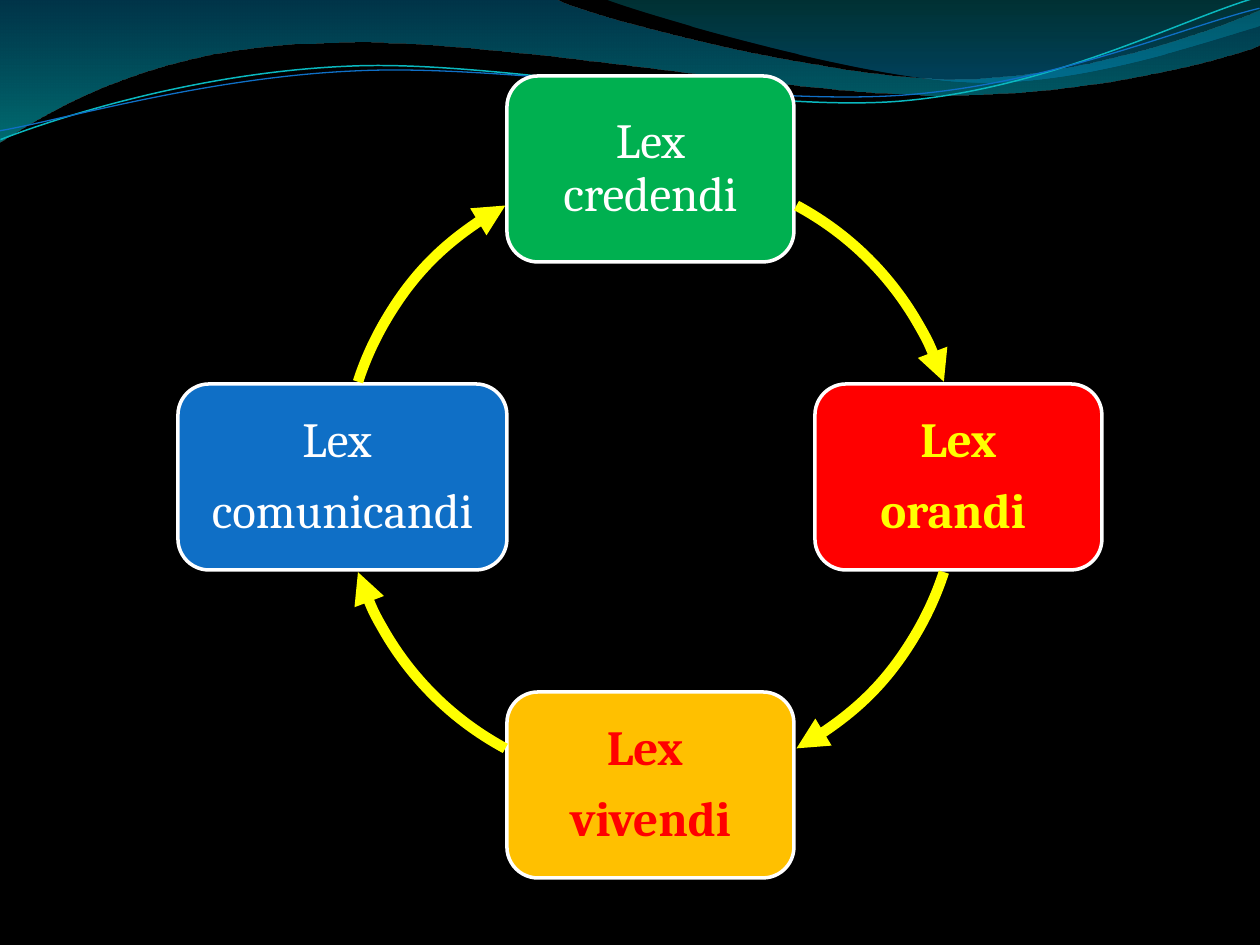
from lxml import etree
from pptx import Presentation
from pptx import util as u
from pptx.dml.color import RGBColor
from pptx.enum import shapes, text
from pptx.oxml.ns import qn

SCALE = u.Inches(1) / 126  # EMU per px
BLACK = RGBColor(0x00, 0x00, 0x00)
WHITE = RGBColor(0xFF, 0xFF, 0xFF)
YELLOW = RGBColor(0xFF, 0xFF, 0x00)
RED = RGBColor(0xFF, 0x00, 0x00)
GREEN = RGBColor(0x00, 0xB0, 0x50)
AMBER = RGBColor(0xFF, 0xC0, 0x00)
BLUE = RGBColor(0x0F, 0x6F, 0xC6)
TURQUOISE = RGBColor(0x0A, 0xB8, 0xBF)
DEEP_BLUE = RGBColor(0x00, 0x74, 0xA1)
LIGHT_TEAL = RGBColor(0x00, 0xC6, 0xCF)
TEAL = RGBColor(0x00, 0xA1, 0xA9)
SKY = RGBColor(0x00, 0x8B, 0xBF)


def px(value):
    return u.Emu(round(value * SCALE))


class Painter:
    font = "Cambria"
    size = u.Pt(28)

    def __init__(self, page):
        self.page = page

    def outline(self, start, segments, close):
        """Freeform; a segment is one line end or three Bezier points."""
        builder = self.page.shapes.build_freeform(*start, scale=SCALE)
        builder.add_line_segments([point for segment in segments for point in segment],
                                  close=close)
        shape = builder.convert_to_shape()
        shape.shadow.inherit = False
        # Join each run of three line ends into one Bezier curve
        line_ends = iter(shape._element.xpath(".//a:path/a:lnTo"))
        for segment in segments:
            steps = [next(line_ends) for _ in segment]
            if len(steps) == 3:
                curve = etree.Element(qn("a:cubicBezTo"))
                steps[0].addprevious(curve)
                for step in steps:
                    curve.append(step[0])
                    step.getparent().remove(step)
        return shape

    def wave(self, start, segments, stops):
        """Filled wave; each stop is (position, colour, opacity in percent)."""
        shape = self.outline(start, segments, True)
        shape.line.fill.background()
        shape.fill.gradient()
        shape.fill.gradient_angle = 270
        for stop, (position, colour, _) in zip(shape.fill.gradient_stops, stops):
            stop.position = position
            stop.color.rgb = colour
        for element, (_, _, opacity) in zip(shape._element.xpath(".//a:gs/a:srgbClr"), stops):
            etree.SubElement(element, qn("a:alpha"), val=str(opacity * 1000))

    def ripple(self, start, segments, colour, width):
        shape = self.outline(start, segments, False)
        shape.rotation = 357.3
        shape.fill.background()
        shape.line.color.rgb = colour
        shape.line.width = u.Pt(width)

    def box(self, left, top, width, height, lines, fill, colour, bold):
        box = self.page.shapes.add_shape(shapes.MSO_SHAPE.ROUNDED_RECTANGLE,
                                         px(left), px(top), px(width), px(height))
        box.shadow.inherit = False
        box.fill.solid()
        box.fill.fore_color.rgb = fill
        box.line.color.rgb = WHITE
        box.line.width = u.Pt(2)
        frame = box.text_frame
        frame.word_wrap = True
        frame.vertical_anchor = text.MSO_ANCHOR.MIDDLE
        frame.margin_left = frame.margin_right = px(15)
        frame.margin_top = frame.margin_bottom = px(15)
        frame.text = "\n".join(lines)
        for para in frame.paragraphs:
            para.alignment = text.PP_ALIGN.CENTER
            para.line_spacing = 0.9
            para.space_after = u.Pt(10)
            para.font.name = self.font
            para.font.size = self.size
            para.font.bold = bold
            para.font.color.rgb = colour

    def arc_arrow(self, left, top, diameter, start, end):
        """Clockwise arrow on a circle, angles in degrees from three o'clock."""
        arc = self.page.shapes.add_shape(shapes.MSO_SHAPE.ARC, px(left), px(top),
                                         px(diameter), px(diameter))
        arc.shadow.inherit = False
        # An angle unit is 1/60000 degree, an adjustment unit 1/100000
        arc.adjustments[0] = start * 0.6
        arc.adjustments[1] = end * 0.6
        arc.fill.background()
        arc.line.color.rgb = YELLOW
        arc.line.width = u.Pt(6)
        etree.SubElement(arc.line._get_or_add_ln(), qn("a:tailEnd"), type="triangle")


def main():
    deck = Presentation()
    deck.slide_width, deck.slide_height = u.Inches(10), u.Inches(7.5)
    page = deck.slides.add_slide(deck.slide_layouts[6])
    page.background.fill.solid()
    page.background.fill.fore_color.rgb = BLACK
    painter = Painter(page)

    # Waves along the top
    painter.wave((0, 0), [
        [(554, -1)],
        [(600, 21), (837, 79), (955, 79)],
        [(1075, 79), (1207, 33), (1260, 11)],
        [(1261, 45)],
        [(1239, 55), (1096, 96), (940, 95)],
        [(784, 95), (481, 35), (324, 43)],
        [(163, 45), (58, 105), (-1, 142)],
    ], [(0, DEEP_BLUE, 45), (1, LIGHT_TEAL, 55)])
    painter.wave((604, -1), [
        [(641, 14), (859, 78), (969, 82)],
        [(1079, 87), (1211, 40), (1260, 26)],
        [(1260, 0)],
    ], [(0, TEAL, 30), (0.8, SKY, 45)])
    painter.ripple((-2, 110), [
        [(58, 90), (199, 52), (350, 53)],
        [(499, 53), (745, 118), (896, 114)],
        [(1049, 109), (1184, 45), (1260, 27)],
    ], TURQUOISE, 0.85)
    painter.ripple((-2, 101), [
        [(57, 94), (208, 57), (358, 58)],
        [(509, 58), (750, 112), (902, 108)],
        [(1052, 104), (1188, 52), (1262, 38)],
    ], BLUE, 0.75)

    # Cycle: boxes clockwise from the top, each followed by its arrow
    cycle = [
        (507, 76, 287, ["Lex credendi"], GREEN, WHITE, False, 298.2, 342),
        (815, 384, 287, ["Lex", "orandi "], RED, YELLOW, True, 18, 61.8),
        (507, 692, 287, ["Lex ", "vivendi"], AMBER, RED, True, 118.2, 162),
        (178, 384, 329, ["Lex ", "comunicandi"], BLUE, WHITE, False, 198, 241.8),
    ]
    for left, top, width, lines, fill, colour, bold, start, end in cycle:
        painter.box(left, top, width, 186, lines, fill, colour, bold)
        painter.arc_arrow(343, 169, 616, start, end)

    deck.save("out.pptx")


if __name__ == "__main__":
    main()
